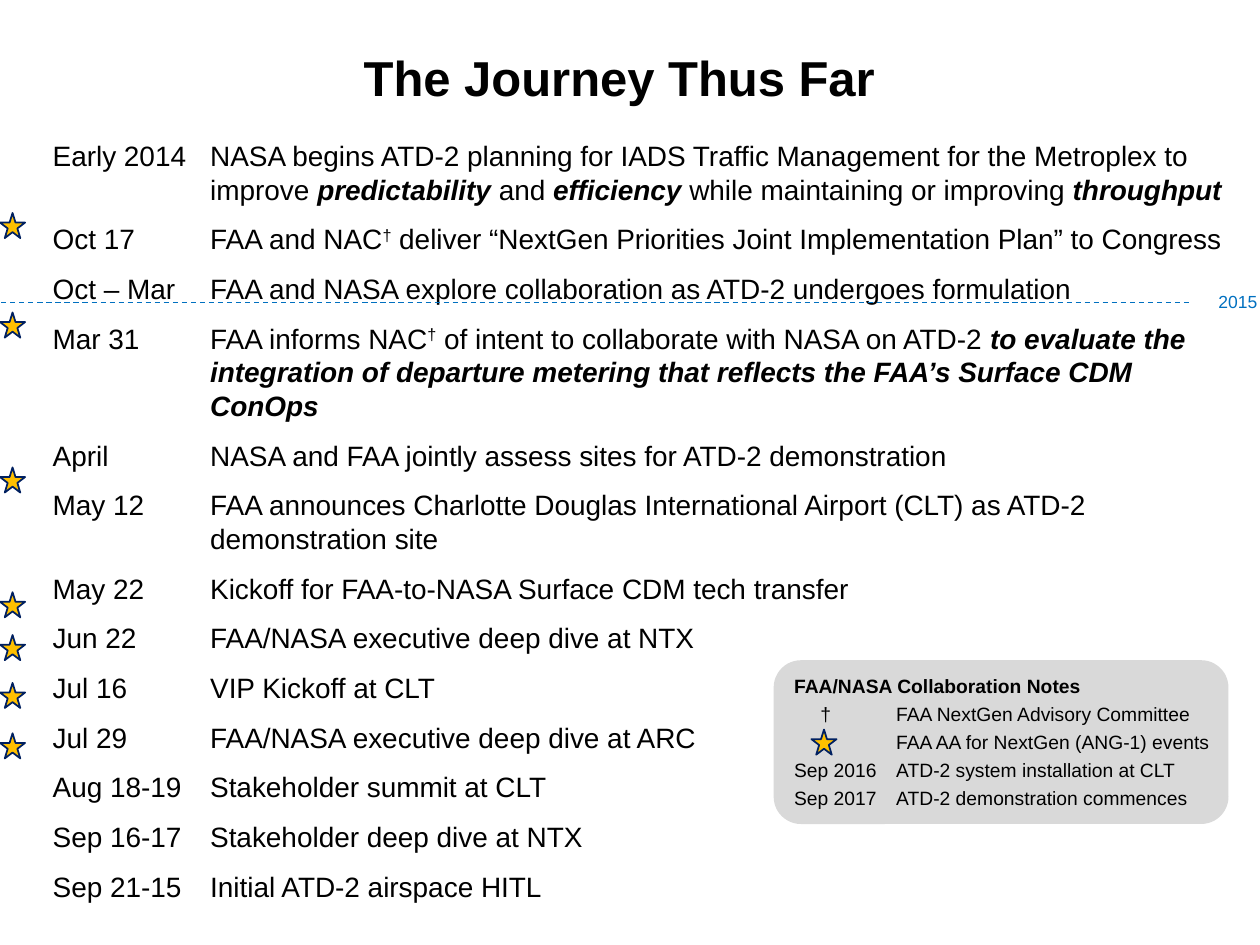
import pptx
import pptx.util
import pptx.dml.color
import pptx.enum.dml
import pptx.enum.shapes
import pptx.enum.text
import pptx.oxml.ns
from lxml import etree

RGB = pptx.dml.color.RGBColor
SHAPE = pptx.enum.shapes.MSO_SHAPE
ANCHOR = pptx.enum.text.MSO_ANCHOR
ALIGN = pptx.enum.text.PP_ALIGN
Inches = pptx.util.Inches
Pt = pptx.util.Pt
qn = pptx.oxml.ns.qn

BLACK = RGB(0x00, 0x00, 0x00)
WHITE = RGB(0xFF, 0xFF, 0xFF)
GREY = RGB(0xD9, 0xD9, 0xD9)
GOLD = RGB(0xFF, 0xC0, 0x00)
NAVY = RGB(0x00, 0x20, 0x60)
BLUE = RGB(0x00, 0x70, 0xC0)

FONT = "Arial"
STAR = 0.2
INDENT = 1.25
STAR_TOPS = [1.69, 2.48, 3.71, 4.7, 5.04, 5.42, 5.82]

EVENTS = [
    ("Early 2014", "NASA begins ATD-2 planning for IADS Traffic Management for the "
     "Metroplex to improve |predictability| and |efficiency| while maintaining "
     "or improving |throughput"),
    ("Oct 17", "FAA and NAC|†| deliver “NextGen Priorities Joint Implementation "
     "Plan” to Congress"),
    ("Oct – Mar", "FAA and NASA explore collaboration as ATD-2 undergoes formulation"),
    ("Mar 31", "FAA informs NAC|†| of intent to collaborate with NASA on ATD-2 |to "
     "evaluate the integration of departure metering that reflects the FAA’s "
     "Surface CDM ConOps"),
    ("April", "NASA and FAA jointly assess sites for ATD-2 demonstration"),
    ("May 12", "FAA announces Charlotte Douglas International Airport (CLT) as ATD-2 "
     "demonstration site"),
    ("May 22", "Kickoff for FAA-to-NASA Surface CDM tech transfer"),
    ("Jun 22", "FAA/NASA executive deep dive at NTX"),
    ("Jul 16", "VIP Kickoff at CLT"),
    ("Jul 29", "FAA/NASA executive deep dive at ARC"),
    ("Aug 18-19", "Stakeholder summit at CLT"),
    ("Sep 16-17", "Stakeholder deep dive at NTX"),
    ("Sep 21-15", "Initial ATD-2 airspace HITL"),
]

NOTES = [
    ("FAA/NASA Collaboration Notes", []),
    ("\t†\tFAA NextGen Advisory Committee", [0.21, 0.81]),
    ("\tFAA AA for NextGen (ANG-1) events", [0.81]),
    ("Sep 2016\tATD-2 system installation at CLT", [0.81]),
    ("Sep 2017\tATD-2 demonstration commences", [0.81]),
]


def style(font, size, color=BLACK, bold=False):
    """Set the face, size, colour and weight of a font."""
    font.name, font.size, font.bold = FONT, Pt(size), bold
    font.color.rgb = color


def add_box(slide, kind, at, fill, line=None):
    """Add a flat preset shape with a fill and an optional outline."""
    box = slide.shapes.add_shape(kind, *map(Inches, at))
    box.shadow.inherit = False
    box.fill.solid()
    box.fill.fore_color.rgb = fill
    if line is None:
        box.line.fill.background()
    else:
        box.line.color.rgb = line
        box.line.width = Pt(1)
    return box


def add_star(slide, left, top):
    """Add one event star."""
    add_box(slide, SHAPE.STAR_5_POINT, (left, top, STAR, STAR), GOLD, NAVY)


def add_paras(frame, count):
    """Give a frame the asked number of left-aligned paragraphs."""
    frame.word_wrap = True
    frame.vertical_anchor = ANCHOR.TOP
    paras = [frame.paragraphs[0]] + [frame.add_paragraph() for _ in range(count - 1)]
    for para in paras:
        para.alignment = ALIGN.LEFT
    return paras


def set_tabs(para, stops):
    """Add left tab stops to a paragraph."""
    tabs = etree.SubElement(para._p.get_or_add_pPr(), qn("a:tabLst"))
    for stop in stops:
        etree.SubElement(tabs, qn("a:tab"), pos=str(Inches(stop)), algn="l")


def add_title(slide, text):
    """Place and format the slide title."""
    title = slide.shapes.title
    title.left, title.top, title.width, title.height = map(Inches, (0.33, 0.3, 9.17, 0.62))
    title.text_frame.text = text
    title.text_frame.vertical_anchor = ANCHOR.MIDDLE
    para = title.text_frame.paragraphs[0]
    para.alignment = ALIGN.CENTER
    style(para.runs[0].font, 28, bold=True)


def add_events(slide):
    """Add the dated list, with marked parts raised or emphasised."""
    box = add_box(slide, SHAPE.RECTANGLE, (0.32, 1.05, 9.67, 6.32), WHITE)
    color = box.fill._xPr.find(".//" + qn("a:srgbClr"))
    etree.SubElement(color, qn("a:alpha"), val="80000")
    paras = add_paras(box.text_frame, len(EVENTS))
    for row, (para, (date, text)) in enumerate(zip(paras, EVENTS)):
        props = para._p.get_or_add_pPr()
        props.set("marL", str(Inches(INDENT)))
        props.set("indent", str(-Inches(INDENT)))
        para.space_before = Pt(3.2 if row else 0)
        para.space_after = Pt(6)
        for i, part in enumerate(f"{date}\t{text}".split("|")):
            run = para.add_run()
            run.text = part
            marked = i % 2 == 1
            raised = part == "†"
            style(run.font, 16, bold=marked and not raised)
            run.font.italic = marked and not raised
            if raised:
                run.font._rPr.set("baseline", "30000")


def add_notes(slide):
    """Add the rounded panel of notes with its star."""
    box = add_box(slide, SHAPE.ROUNDED_RECTANGLE, (6.14, 5.24, 3.61, 1.3), GREY)
    frame = box.text_frame
    frame.margin_right = Inches(0.05)
    for row, (para, (text, stops)) in enumerate(zip(add_paras(frame, len(NOTES)), NOTES)):
        para.space_after = Pt(2.75)
        if stops:
            set_tabs(para, stops)
        para.text = text
        style(para.runs[0].font, 11, bold=row == 0)
    add_star(slide, 6.44, 5.79)


def add_year(slide, text):
    """Add the dashed year divider and its label."""
    label = slide.shapes.add_textbox(*map(Inches, (9.67, 2.31, 0.31, 0.17)))
    frame = label.text_frame
    frame.margin_left = frame.margin_right = frame.margin_top = frame.margin_bottom = 0
    frame.word_wrap = False
    frame.auto_size = pptx.enum.text.MSO_AUTO_SIZE.SHAPE_TO_FIT_TEXT
    frame.text = text
    style(frame.paragraphs[0].runs[0].font, 10, BLUE)
    line = slide.shapes.add_connector(
        pptx.enum.shapes.MSO_CONNECTOR.STRAIGHT, *map(Inches, (0.01, 2.4, 9.45, 2.4)))
    line.line.color.rgb = BLUE
    line.line.width = Pt(0.75)
    line.line.dash_style = pptx.enum.dml.MSO_LINE.DASH
    etree.SubElement(line._element.spPr, qn("a:effectLst"))


def main():
    """Build and save the slide."""
    deck = pptx.Presentation()
    deck.slide_width, deck.slide_height = Inches(10), Inches(7.5)
    slide = deck.slides.add_slide(deck.slide_layouts[5])
    add_title(slide, "The Journey Thus Far")
    add_events(slide)
    add_notes(slide)
    add_year(slide, "2015")
    for top in STAR_TOPS:
        add_star(slide, 0, top)
    deck.save("out.pptx")


if __name__ == "__main__":
    main()
